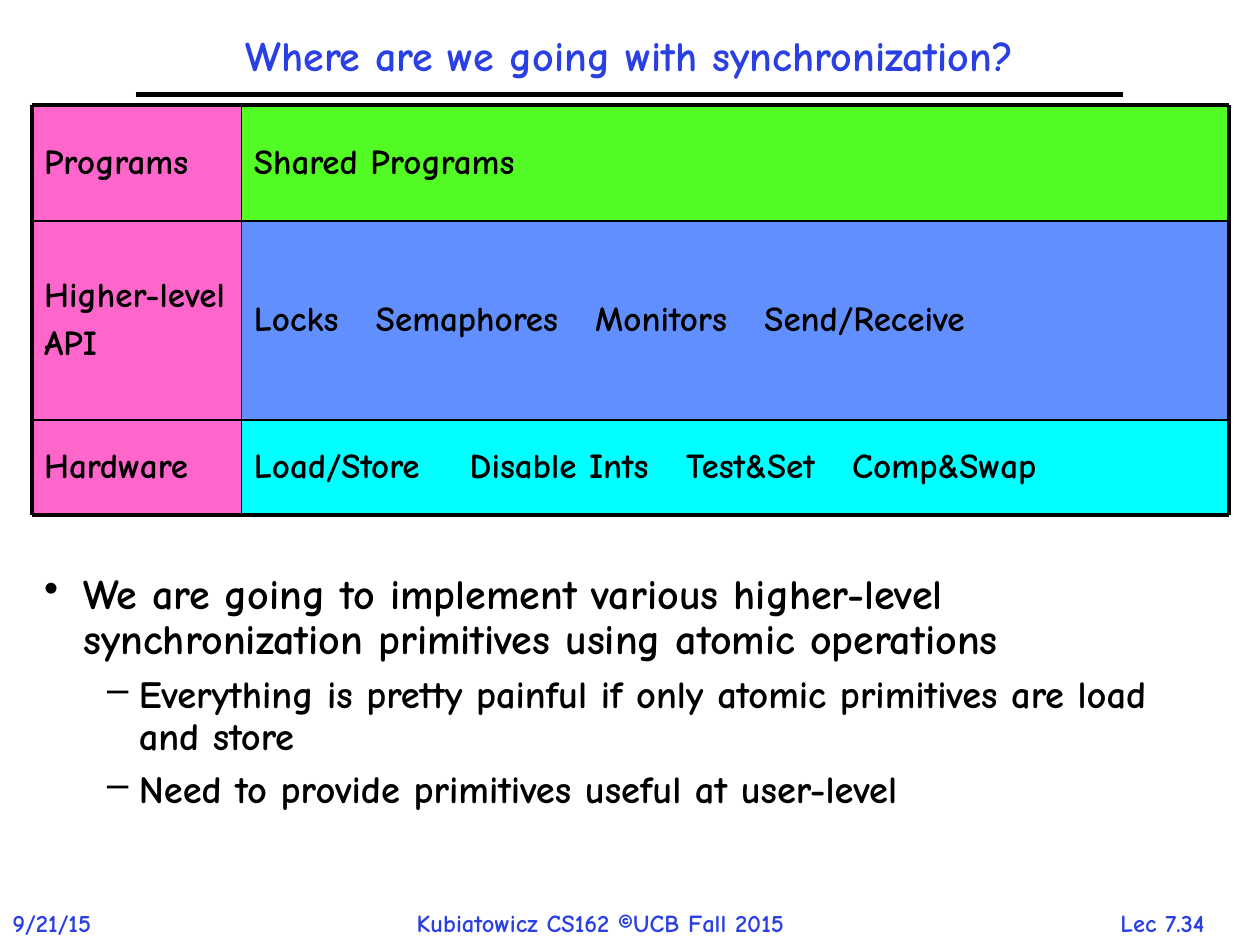
from itertools import accumulate
from lxml.etree import SubElement
from pptx import Presentation
from pptx.dml.color import RGBColor
from pptx.enum.shapes import MSO_CONNECTOR as Connector, MSO_SHAPE as Shape
from pptx.enum.text import MSO_ANCHOR as Anchor, PP_ALIGN as Align
from pptx.oxml.ns import qn
from pptx.util import Cm, Pt

FONT = "Comic Neue"
COLORS = {
    "blue": "2A40E2",
    "black": "000000",
    "pink": "FF66CC",
    "green": "53FB25",
    "periwinkle": "618FFD",
    "cyan": "00FFFF",
}
LAYERS = [
    ("Programs", ["Shared Programs"], [], "green", 2.33),
    ("Higher-level\nAPI", ["Locks", "Semaphores", "Monitors", "Send/Receive"],
     [2.46, 6.88, 10.29], "periwinkle", 4.02),
    ("Hardware", ["Load/Store", "Disable Ints", "Test&Set", "Comp&Swap"],
     [4.35, 8.71, 12.06], "cyan", 1.91),
]
POINTS = [
    (0, "We are going to implement various higher-level synchronization "
        "primitives using atomic operations"),
    (1, "Everything is pretty painful if only atomic primitives are load and store"),
    (1, "Need to provide primitives useful at user-level"),
]
LEVELS = [(24, "•", 0.79, 0.79), (22, "–", 1.91, 0.64)]


def color(name):
    """Return the named colour."""
    return RGBColor.from_string(COLORS[name])


def style(para, size, tone="black", align=Align.LEFT, spacing=None):
    """Format a paragraph and its text."""
    para.alignment = align
    if spacing:
        para.line_spacing = spacing
    for span in para.runs:
        span.font.name = FONT
        span.font.size = Pt(size)
        span.font.bold = True
        span.font.color.rgb = color(tone)


def add_text(page, box, text, wrap=True, anchor=Anchor.TOP):
    """Add a text box and return its frame."""
    frame = page.shapes.add_textbox(*map(Cm, box)).text_frame
    frame.word_wrap = wrap
    frame.vertical_anchor = anchor
    frame.text = text
    return frame


def add_line(page, start, end, width):
    """Draw a plain black line."""
    line = page.shapes.add_connector(Connector.STRAIGHT, *map(Cm, (*start, *end)))
    line.line.color.rgb = color("black")
    line.line.width = Pt(width)
    SubElement(line._element.spPr, qn("a:effectLst"))


def add_title(page, box, text):
    """Place the title with its rule below."""
    left, top, width, height = box
    frame = add_text(page, box, text, anchor=Anchor.MIDDLE)
    style(frame.paragraphs[0], 24, "blue", Align.CENTER, 0.9)
    add_line(page, (left, top + height), (left + width, top + height), 3)


def add_cell(page, box, text, fill, tabs=()):
    """Add one filled cell, with tab stops between its entries."""
    cell = page.shapes.add_shape(Shape.RECTANGLE, *map(Cm, box))
    cell.shadow.inherit = False
    cell.fill.solid()
    cell.fill.fore_color.rgb = color(fill)
    cell.line.fill.background()
    frame = cell.text_frame
    frame.vertical_anchor = Anchor.MIDDLE
    frame.text = text
    for para in frame.paragraphs:
        style(para, 20, spacing=0.9)
        para.space_before = Pt(6)
        if tabs:
            stops = SubElement(para._p.get_or_add_pPr(), qn("a:tabLst"))
            for tab in tabs:
                SubElement(stops, qn("a:tab"), pos=str(Cm(tab)), algn="l")


def add_layers(page, box, label_width):
    """Draw the grid of layers with its rules."""
    left, top, width, height = box
    right, middle = left + width, left + label_width
    edges = list(accumulate((layer[-1] for layer in LAYERS), initial=top))
    for (label, entries, tabs, fill, tall), y in zip(LAYERS, edges):
        add_cell(page, (middle, y, width - label_width, tall),
                 "\t".join(entries), fill, tabs)
        add_cell(page, (left, y, label_width, tall), label, "pink")
    for y in edges:
        add_line(page, (left, y), (right, y), 2.25 if y in (edges[0], edges[-1]) else 1)
    for x in (left, middle, right):
        add_line(page, (x, top), (x, top + height), 1 if x == middle else 2.25)


def add_points(page, box):
    """Write the bulleted points."""
    frame = add_text(page, box, "\n".join(text for _, text in POINTS))
    for para, (level, _) in zip(frame.paragraphs, POINTS):
        size, mark, margin, hang = LEVELS[level]
        para.level = level
        para.space_before = Pt(size * 0.3)
        style(para, size, spacing=0.9)
        props = para._p.get_or_add_pPr()
        props.set("marL", str(Cm(margin)))
        props.set("indent", str(-Cm(hang)))
        SubElement(props, qn("a:buChar"), char=mark)


def add_footer(page, box):
    """Write the date, course and page number."""
    left, top, width, height = box
    parts = [
        (0, 2.54, "9/21/15", Align.LEFT),
        (8.15, 9.17, "Kubiatowicz CS162 ©UCB Fall 2015", Align.LEFT),
        (width - 3.07, 3.07, "Lec 7.34", Align.CENTER),
    ]
    for x, wide, text, align in parts:
        frame = add_text(page, (left + x, top, wide, height), text, wrap=False)
        style(frame.paragraphs[0], 14, "blue", align)


def main():
    """Build and save the slide."""
    deck = Presentation()
    deck.slide_width, deck.slide_height = Cm(25.4), Cm(19.05)
    page = deck.slides.add_slide(deck.slide_layouts[6])
    add_footer(page, (0, 18.19, 24.97, 0.86))
    add_title(page, (2.74, 0.43, 19.9, 1.48), "Where are we going with synchronization?")
    add_points(page, (0.64, 11.43, 23.93, 5.92))
    add_layers(page, (0.64, 2.12, 24.13, 8.26), 4.23)
    deck.save("out.pptx")


if __name__ == "__main__":
    main()
